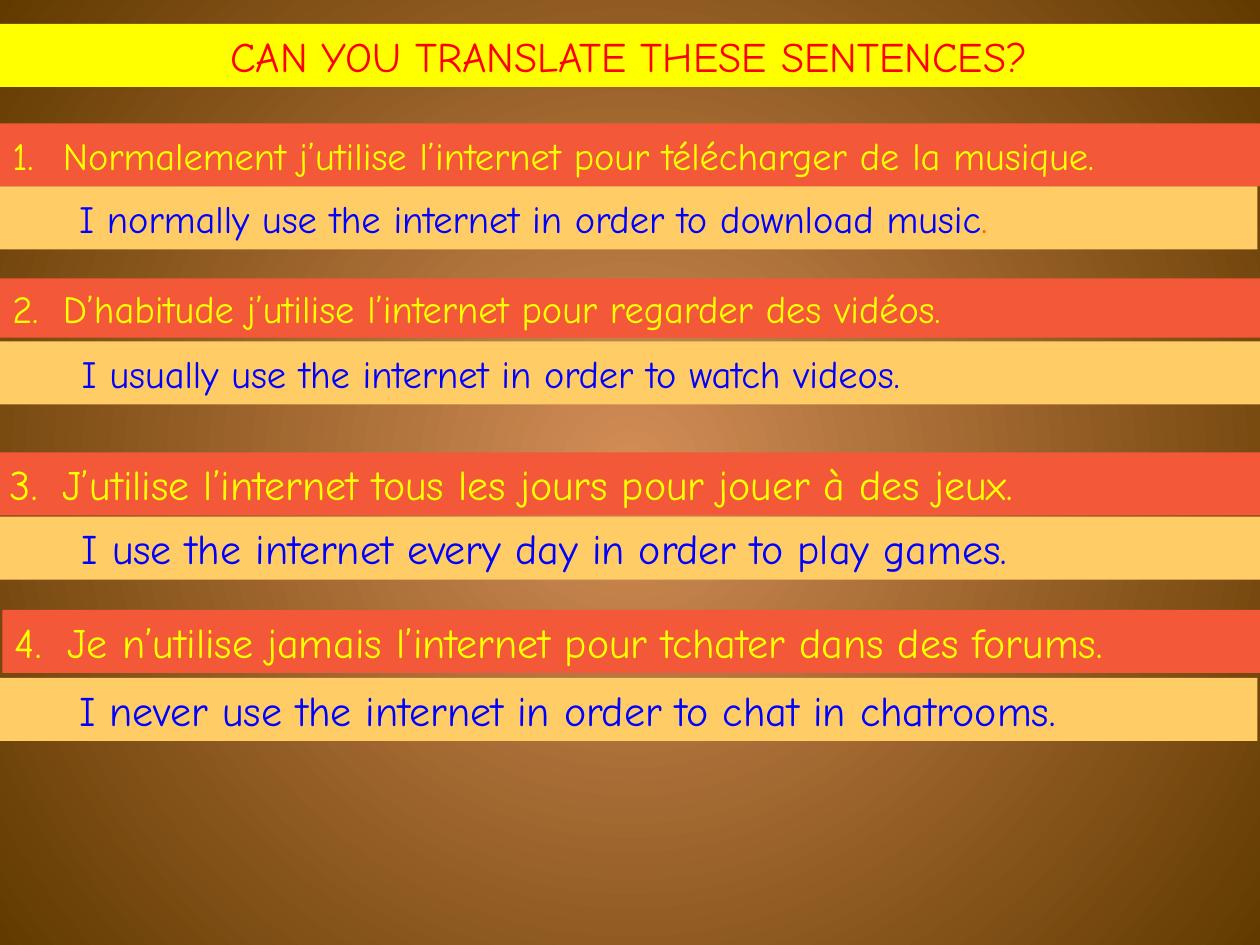
from dataclasses import dataclass

from lxml import etree
from pptx import Presentation
from pptx.dml.color import RGBColor
from pptx.enum.shapes import MSO_SHAPE
from pptx.enum.text import MSO_ANCHOR, PP_ALIGN
from pptx.oxml.ns import qn
from pptx.slide import Slide
from pptx.text.text import _Paragraph
from pptx.util import Inches, Pt

RECTANGLE = MSO_SHAPE.RECTANGLE
MIDDLE = MSO_ANCHOR.MIDDLE
LEFT, CENTER = PP_ALIGN.LEFT, PP_ALIGN.CENTER

FONT = "Comic Neue"
BAND_HEIGHT = 0.5
ANSWER_INDENT = 0.55
NUMBER_INDENT = {22: 0.4, 24: 0.42}
COLORS = {
    "glow": "D38D57",
    "edge": "623A00",
    "title_band": "FFFF00",
    "title": "FF0000",
    "french_band": "F35839",
    "french": "FFFF00",
    "english_band": "FFCC66",
    "english": "0000FF",
    "full_stop": "FF6600",
}


@dataclass
class Band:
    left: float
    top: float
    width: float = 10
    height: float = BAND_HEIGHT


@dataclass
class Sentence:
    french: str
    english: str
    size: int
    french_band: Band
    english_band: Band
    full_stop: str = ""


SENTENCES = [
    Sentence(
        "Normalement j’utilise l’internet pour télécharger de la musique.",
        "I normally use the internet in order to download music",
        22, Band(0, 0.98), Band(-0.02, 1.48), ".",
    ),
    Sentence(
        "D’habitude j’utilise l’internet pour regarder des vidéos.",
        "I usually use the internet in order to watch videos.",
        22, Band(0, 2.21, height=0.47), Band(0, 2.71),
    ),
    Sentence(
        "J’utilise l’internet tous les jours pour jouer à des jeux.",
        "I use the internet every day in order to play games.",
        24, Band(-0.02, 3.59, 10.05), Band(0, 4.1),
    ),
    Sentence(
        "Je n’utilise jamais l’internet pour tchater dans des forums.",
        "I never use the internet in order to chat in chatrooms.",
        24, Band(0.02, 4.84), Band(-0.02, 5.38),
    ),
]


def paint_background(slide: Slide) -> None:
    fill = slide.background.fill
    fill.gradient()
    for stop, color in zip(fill.gradient_stops, ("glow", "edge")):
        stop.color.rgb = RGBColor.from_string(COLORS[color])
    gradient = slide.element.find(".//" + qn("a:gradFill"))
    gradient.remove(gradient.find(qn("a:lin")))
    circle = etree.SubElement(gradient, qn("a:path"), {"path": "circle"})
    center = {side: "50000" for side in "ltrb"}
    etree.SubElement(circle, qn("a:fillToRect"), center)


def add_band(slide: Slide, band: Band, color: str, alignment: PP_ALIGN = LEFT) -> _Paragraph:
    strip = slide.shapes.add_shape(
        RECTANGLE, Inches(band.left), Inches(band.top), Inches(band.width), Inches(band.height)
    )
    strip.shadow.inherit = False
    strip.fill.solid()
    strip.fill.fore_color.rgb = RGBColor.from_string(COLORS[color])
    strip.line.fill.background()
    strip.text_frame.word_wrap = True
    strip.text_frame.vertical_anchor = MIDDLE
    paragraph = strip.text_frame.paragraphs[0]
    paragraph.alignment = alignment
    return paragraph


def add_run(paragraph: _Paragraph, text: str, size: int, color: str) -> None:
    run = paragraph.add_run()
    run.text = text
    run.font.name = FONT
    run.font.size = Pt(size)
    run.font.color.rgb = RGBColor.from_string(COLORS[color])


def set_indent(paragraph: _Paragraph, margin: float, first_line: float = 0) -> None:
    properties = paragraph._p.get_or_add_pPr()
    properties.set("marL", str(Inches(margin)))
    properties.set("indent", str(Inches(first_line)))


def add_sentence(slide: Slide, number: int, sentence: Sentence) -> None:
    question = add_band(slide, sentence.french_band, "french_band")
    hanging = NUMBER_INDENT[sentence.size]
    set_indent(question, hanging, -hanging)
    add_run(question, f"{number}.\t{sentence.french}", sentence.size, "french")

    answer = add_band(slide, sentence.english_band, "english_band")
    set_indent(answer, ANSWER_INDENT)
    add_run(answer, sentence.english, sentence.size, "english")
    if sentence.full_stop:
        add_run(answer, sentence.full_stop, sentence.size, "full_stop")


def main() -> None:
    presentation = Presentation()
    presentation.slide_width = Inches(10)
    presentation.slide_height = Inches(7.5)
    slide = presentation.slides.add_slide(presentation.slide_layouts[6])
    paint_background(slide)
    title = add_band(slide, Band(-0.02, 0.19, 10.02), "title_band", CENTER)
    add_run(title, "CAN YOU TRANSLATE THESE SENTENCES?", 24, "title")
    for number, sentence in enumerate(SENTENCES, start=1):
        add_sentence(slide, number, sentence)
    presentation.save("out.pptx")


if __name__ == "__main__":
    main()
